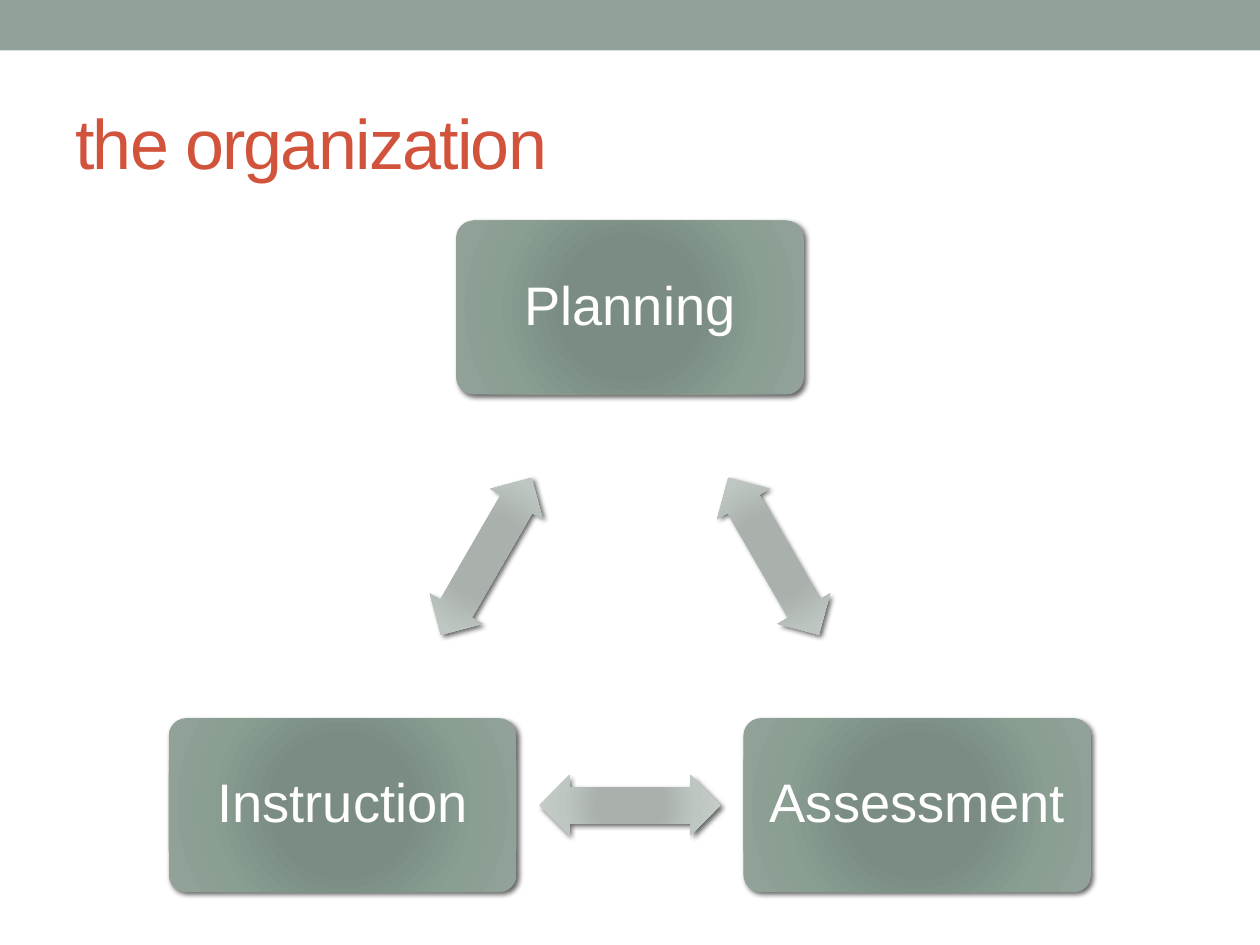
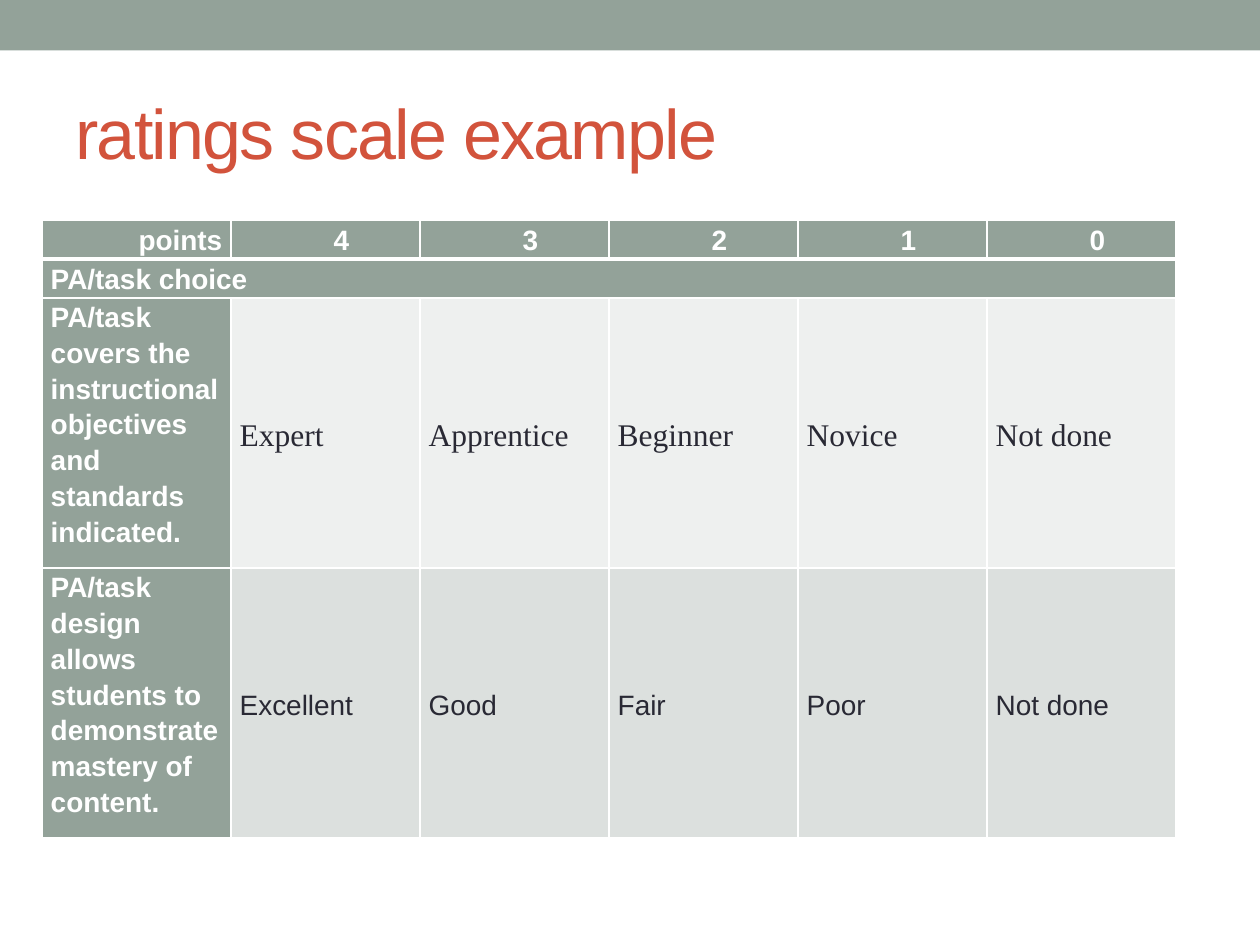
import math

import lxml.etree
import pptx
import pptx.dml.color
import pptx.enum.shapes
import pptx.enum.text
import pptx.oxml
import pptx.oxml.ns
import pptx.util

Pt = pptx.util.Pt
SHAPES = pptx.enum.shapes.MSO_SHAPE
ALIGN = pptx.enum.text.PP_ALIGN
ANCHOR = pptx.enum.text.MSO_ANCHOR

SAGE, BRICK, INK, WHITE = "93A299", "D2533C", "292934", "FFFFFF"
BOX_STOPS = [(0, "7B8E82"), (34, "7B8D83"), (70, "8A9E92"), (100, SAGE)]
ARROW_STOPS = [(0, "AAB2AD"), (34, "AAB1AD"), (70, "BDC6C1"), (100, "C8CECA")]
ROW_FILLS = ["EEF0EF", "DCE0DE"]


def rgb(hex_text):
    return pptx.dml.color.RGBColor.from_string(hex_text)


def xml_part(tag, body="", **attributes):
    """Build one DrawingML element, named without its prefix."""
    listed = "".join(f' {name}="{value}"' for name, value in attributes.items())
    return pptx.oxml.parse_xml(
        f'<a:{tag} {pptx.oxml.ns.nsdecls("a")}{listed}>{body}</a:{tag}>')


class Deck:
    font = "Arial"
    width, height = 720, 540
    band_height = 28.8

    def __init__(self):
        self.deck = pptx.Presentation()
        self.deck.slide_width = Pt(self.width)
        self.deck.slide_height = Pt(self.height)
        self.slide = None

    def add_slide(self, title, title_top):
        self.slide = self.deck.slides.add_slide(self.deck.slide_layouts[6])
        band = self.shape(SHAPES.RECTANGLE, 0, 0, self.width, self.band_height)
        band.fill.solid()
        band.fill.fore_color.rgb = rgb(SAGE)
        self.title(title, title_top)

    def title(self, text, top):
        box = self.slide.shapes.add_textbox(Pt(36), Pt(top), Pt(648), Pt(77.8))
        box.text_frame.word_wrap = True
        box.text_frame.vertical_anchor = ANCHOR.MIDDLE
        box.text_frame.text = text
        para = box.text_frame.paragraphs[0]
        self.style(para, 40, BRICK)
        para.runs[0].font._element.set("spc", "-100")

    def style(self, para, size, color, bold=False, font=None):
        for span in para.runs:
            span.font.name = font or self.font
            span.font.size = Pt(size)
            span.font.bold = bold
            span.font.color.rgb = rgb(color)

    def shape(self, kind, left, top, width, height):
        shape = self.slide.shapes.add_shape(
            kind, Pt(left), Pt(top), Pt(width), Pt(height))
        shape.line.fill.background()
        shape.shadow.inherit = False
        return shape

    def raised_shape(self, kind, center, size, adjustments, stops):
        """Add a shape around a centre, with a round gradient and a soft shadow."""
        (x, y), (width, height) = center, size
        shape = self.shape(kind, x - width / 2, y - height / 2, width, height)
        for index, value in enumerate(adjustments):
            shape.adjustments[index] = value
        stop_list = "".join(
            f'<a:gs pos="{place * 1000}"><a:srgbClr val="{color}"/></a:gs>'
            for place, color in stops)
        gradient = xml_part("gradFill", f"<a:gsLst>{stop_list}</a:gsLst>"
                            '<a:path path="circle"><a:fillToRect l="100000" '
                            't="100000" r="100000" b="100000"/></a:path>', rotWithShape=1)
        properties = shape._element.spPr
        properties.find(pptx.oxml.ns.qn("a:prstGeom")).addnext(gradient)
        properties.find(pptx.oxml.ns.qn("a:effectLst")).append(xml_part(
            "outerShdw", '<a:srgbClr val="000000"><a:alpha val="60000"/></a:srgbClr>',
            blurRad=Pt(3), dist=Pt(2), dir=45 * 60000, algn="tl", rotWithShape=0))
        return shape

    def labelled_box(self, text, center):
        box = self.raised_shape(SHAPES.ROUNDED_RECTANGLE, center, (198.7, 99.4),
                                [0.1], BOX_STOPS)
        frame = box.text_frame
        frame.margin_left = frame.margin_right = Pt(12)
        frame.vertical_anchor = ANCHOR.MIDDLE
        frame.word_wrap = True
        frame.text = text
        para = frame.paragraphs[0]
        para.alignment = ALIGN.CENTER
        para.line_spacing = 0.9
        self.style(para, 31, WHITE)

    def double_arrow(self, center, rotation):
        arrow = self.raised_shape(SHAPES.LEFT_RIGHT_ARROW, center, (103.7, 34.6),
                                  [0.6, 0.5], ARROW_STOPS)
        arrow.rotation = rotation

    def table(self, left, top, column_width, row_heights, column_count):
        table = self.slide.shapes.add_table(
            len(row_heights), column_count, Pt(left), Pt(top),
            Pt(column_width * column_count), Pt(sum(row_heights))).table
        for column in table.columns:
            column.width = Pt(column_width)
        for row, height in zip(table.rows, row_heights):
            row.height = Pt(height)
        return table

    def cell(self, cell, text, fill, top_line=1, bottom_line=1, middle=False,
             align=ALIGN.LEFT, indent=0, **text_style):
        cell.margin_left = cell.margin_right = Pt(5)
        cell.margin_top = cell.margin_bottom = 0
        cell.vertical_anchor = ANCHOR.MIDDLE if middle else ANCHOR.TOP
        lines = {"lnL": 1, "lnR": 1, "lnT": top_line, "lnB": bottom_line}
        for tag, weight in lines.items():
            cell._tc.get_or_add_tcPr().append(xml_part(
                tag, f'<a:solidFill><a:srgbClr val="{WHITE}"/></a:solidFill>',
                w=Pt(weight)))
        cell.fill.solid()
        cell.fill.fore_color.rgb = rgb(fill)
        cell.text_frame.text = text
        para = cell.text_frame.paragraphs[0]
        para.alignment = align
        para.line_spacing = 1.15
        para._p.get_or_add_pPr().set("marL", str(Pt(indent)))
        self.style(para, **text_style)


def build_organization(deck):
    deck.add_slide("the organization", 41.8)
    center_x, center_y, radius = 360, 365.3, 189.6
    corners = []
    for index in range(3):
        angle = math.radians(120 * index - 90)
        corners.append((center_x + radius * math.cos(angle),
                        center_y + radius * math.sin(angle)))
    for index, label in enumerate(["Planning", "Assessment", "Instruction"]):
        (x, y), (next_x, next_y) = corners[index], corners[(index + 1) % 3]
        deck.labelled_box(label, (x, y))
        deck.double_arrow(((x + next_x) / 2, (y + next_y) / 2), 60 + 120 * index)


def build_ratings(deck):
    deck.add_slide("ratings scale example", 36)
    points = ["points", "4", "3", "2", "1", "0"]
    ratings = [
        ["PA/task covers the instructional objectives and standards indicated.",
         "Expert", "Apprentice", "Beginner", "Novice", "Not done"],
        ["PA/task design allows students to demonstrate mastery of content.",
         "Excellent", "Good", "Fair", "Poor", "Not done"],
    ]
    heading = {"size": 16, "color": WHITE, "bold": True}
    rating_styles = [{"size": 18, "color": INK, "font": "Times New Roman"},
                     {"size": 16, "color": INK}]
    table = deck.table(24, 126, 108, [20.5, 20.5, 143, 143], len(points))

    for column, text in enumerate(points):
        deck.cell(table.cell(0, column), text, SAGE, bottom_line=3,
                  align=ALIGN.CENTER if column else ALIGN.RIGHT,
                  indent=18 if column else 0, **heading)
        deck.cell(table.cell(1, column), "" if column else "PA/task choice", SAGE,
                  top_line=3, **heading)
    table.cell(1, 0).merge(table.cell(1, len(points) - 1))

    for row, (texts, fill, style) in enumerate(zip(ratings, ROW_FILLS, rating_styles), 2):
        deck.cell(table.cell(row, 0), texts[0], SAGE, **heading)
        for column, text in enumerate(texts[1:], 1):
            deck.cell(table.cell(row, column), text, fill, middle=True, **style)


def main():
    deck = Deck()
    build_organization(deck)
    build_ratings(deck)
    deck.deck.save("out.pptx")


if __name__ == "__main__":
    main()
